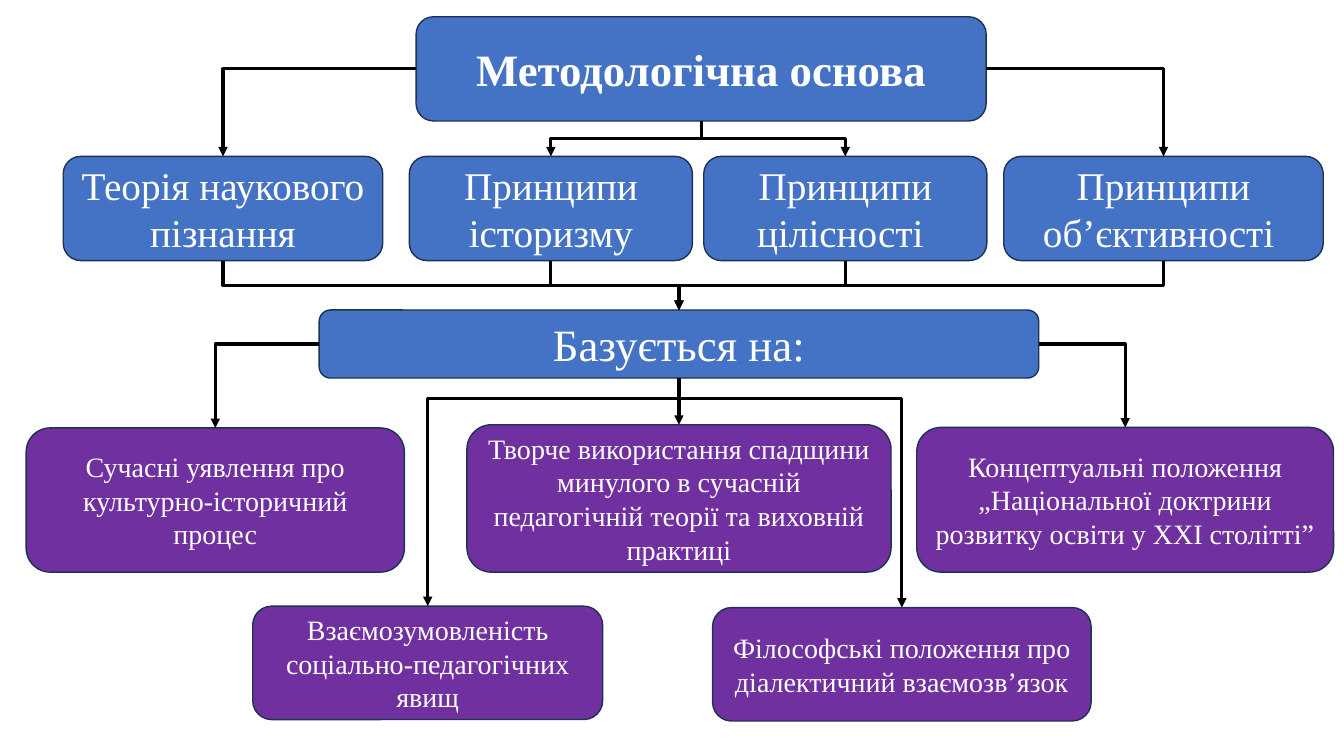
from dataclasses import dataclass

from lxml.etree import SubElement
from pptx import Presentation
from pptx.dml.color import RGBColor as Rgb
from pptx.enum.shapes import MSO_CONNECTOR as Conn, MSO_SHAPE as Form
from pptx.enum.text import MSO_ANCHOR as Anchor, PP_ALIGN as Align
from pptx.oxml.ns import qn
from pptx.shapes.autoshape import Shape
from pptx.shapes.connector import Connector
from pptx.shapes.shapetree import SlideShapes
from pptx.util import Pt

TOP, LEFT, BOTTOM, RIGHT = range(4)


@dataclass(frozen=True)
class Theme:
    font: str = "Times New Roman"
    blue: Rgb = Rgb(0x44, 0x72, 0xC4)
    purple: Rgb = Rgb(0x70, 0x30, 0xA0)
    edge: Rgb = Rgb(0x1E, 0x32, 0x56)
    ink: Rgb = Rgb(0, 0, 0)
    white: Rgb = Rgb(0xFF, 0xFF, 0xFF)
    title: float = 32
    head: float = 28
    body: float = 20
    thin: float = 1
    thick: float = 2.25


THEME = Theme()


@dataclass(frozen=True)
class Box:
    name: str
    text: str
    left: float
    top: float
    width: float
    height: float
    size: float = THEME.body
    fill: Rgb = THEME.purple
    bold: bool = False


@dataclass(frozen=True)
class Link:
    start: str
    end: str
    side: int = BOTTOM
    bend: float = 0.5


def head(name: str, text: str, left: float, width: float) -> Box:
    return Box(name, text, left, 111.7, width, 74.4, THEME.head, THEME.blue)


BOXES = [
    Box("method", "Методологічна основа", 297.2, 12, 407.2, 74.4,
        THEME.title, THEME.blue, True),
    head("theory", "Теорія наукового пізнання", 45.2, 228.2),
    head("history", "Принципи історизму", 292.4, 202.2),
    head("whole", "Принципи цілісності ", 502.7, 202.2),
    head("object", "Принципи об’єктивності ", 717, 228.2),
    Box("base", "Базується на:", 228, 221.4, 514, 48.6,
        THEME.title, THEME.blue),
    Box("culture", "Сучасні уявлення про культурно-історичний процес",
        18.7, 305.7, 270.2, 103),
    Box("thought", "Філософські положення про діалектичний взаємозв’язок",
        509, 434, 270.4, 81),
    Box("social", "Взаємозумовленість соціально-педагогічних явищ",
        180.5, 433, 250, 81),
    Box("legacy", "Творче використання спадщини минулого в сучасній "
        "педагогічній теорії та виховній практиці", 333.5, 303.4, 303, 105.3),
    Box("concept", "Концептуальні положення „Національної доктрини "
        "розвитку освіти у ХХІ столітті”", 654.9, 305.3, 297.7, 103.4),
]

LINKS = [
    Link("method", "object", RIGHT),
    Link("method", "theory", LEFT),
    Link("method", "history"),
    Link("method", "whole"),
    Link("base", "concept", RIGHT),
    Link("base", "culture", LEFT),
    Link("base", "social", bend=0.09),
    Link("base", "thought", bend=0.09),
    Link("base", "legacy"),
    *(Link(name, "base") for name in ("theory", "history", "whole", "object")),
]


def draw_box(tree: SlideShapes, box: Box) -> Shape:
    shape = tree.add_shape(Form.ROUNDED_RECTANGLE, Pt(box.left), Pt(box.top),
                           Pt(box.width), Pt(box.height))
    shape.shadow.inherit = False
    shape.fill.solid()
    shape.fill.fore_color.rgb = box.fill
    shape.line.color.rgb = THEME.edge
    shape.line.width = Pt(THEME.thin)
    frame = shape.text_frame
    frame.word_wrap = True
    frame.vertical_anchor = Anchor.MIDDLE
    para = frame.paragraphs[0]
    para.text = box.text
    para.alignment = Align.CENTER
    para.font.name = THEME.font
    para.font.size = Pt(box.size)
    para.font.bold = box.bold
    para.font.color.rgb = THEME.white
    return shape


def turn(line: Connector, bend: float) -> None:
    dx, dy = line.end_x - line.begin_x, line.end_y - line.begin_y
    mid_x = (line.begin_x + line.end_x) // 2
    mid_y = (line.begin_y + line.end_y) // 2
    line.left, line.top = mid_x - dy // 2, mid_y - abs(dx) // 2
    line.width, line.height = dy, abs(dx)
    props = line._element.spPr
    frame = props.find(qn("a:xfrm"))
    frame.set("rot", str((270 if dx > 0 else 90) * 60000))
    frame.set("flipH", "1" if dx > 0 else "0")
    guides = props.find(qn("a:prstGeom")).find(qn("a:avLst"))
    SubElement(guides, qn("a:gd"), name="adj1", fmla=f"val {round(bend * 100000)}")


def draw_link(tree: SlideShapes, link: Link, shapes: dict[str, Shape]) -> None:
    start, end = shapes[link.start], shapes[link.end]
    plain = (link.start, link.end) == ("base", "legacy")
    line = tree.add_connector(Conn.STRAIGHT if plain else Conn.ELBOW, 0, 0, 0, 0)
    line.begin_connect(start, link.side)
    line.end_connect(end, TOP)
    props = line._element.spPr
    if link.side != BOTTOM:
        props.find(qn("a:prstGeom")).set("prst", "bentConnector2")
    elif not plain:
        turn(line, link.bend)
    line.line.color.rgb = THEME.ink
    line.line.width = Pt(THEME.thick)
    SubElement(props.find(qn("a:ln")), qn("a:tailEnd"), type="triangle")
    SubElement(props, qn("a:effectLst"))


def main() -> None:
    deck = Presentation()
    deck.slide_width, deck.slide_height = Pt(960), Pt(540)
    tree = deck.slides.add_slide(deck.slide_layouts[6]).shapes
    shapes = {box.name: draw_box(tree, box) for box in BOXES}
    for link in LINKS:
        draw_link(tree, link, shapes)
    deck.save("out.pptx")


if __name__ == "__main__":
    main()
